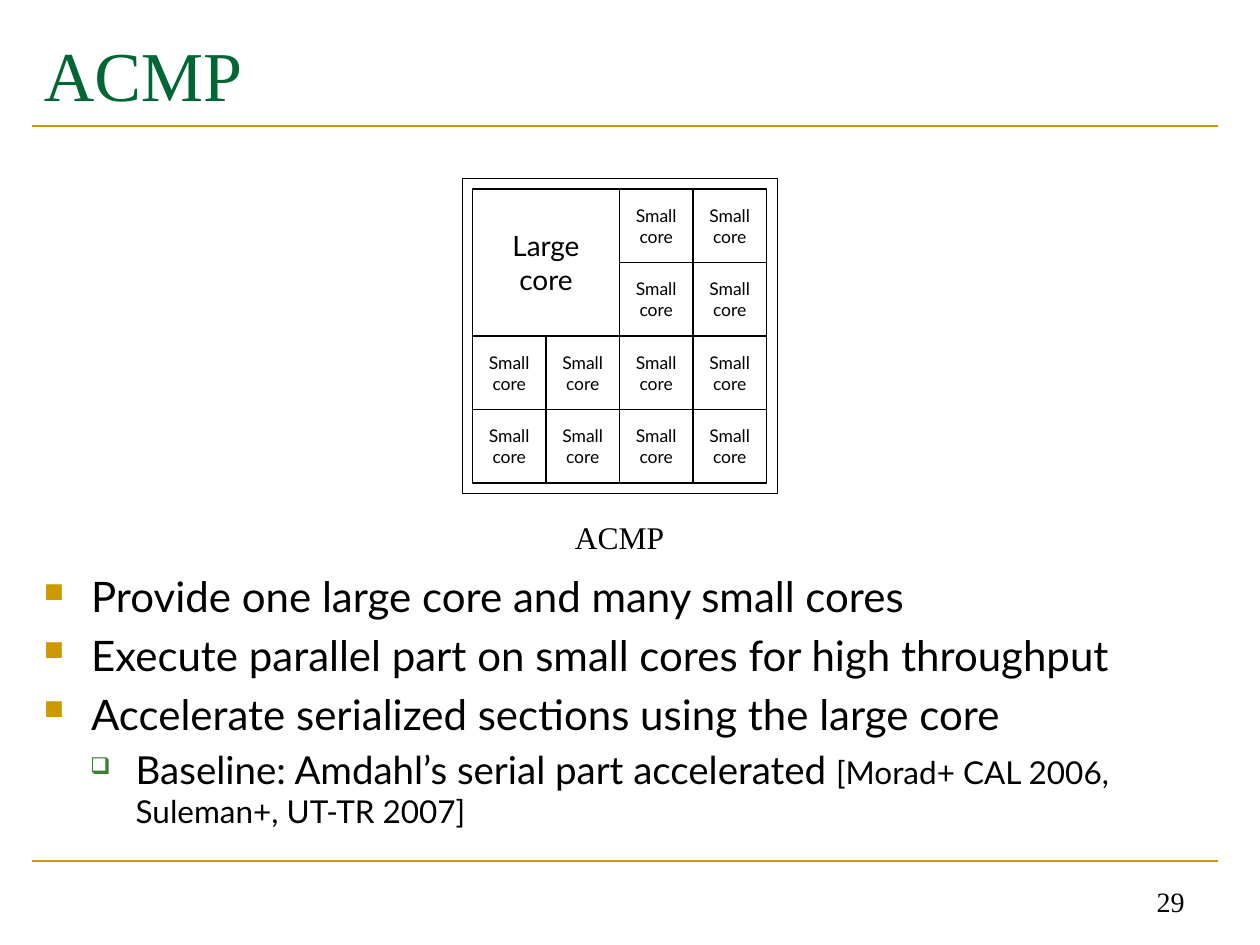
from copy import deepcopy
from dataclasses import dataclass

from lxml import etree
from pptx import Presentation
from pptx import util as u
from pptx.dml.color import RGBColor
from pptx.enum import shapes, text
from pptx.oxml import ns

GOLD = RGBColor(0xCC, 0x99, 0x00)
TITLE_GREEN = RGBColor(0x00, 0x66, 0x33)
BULLET_GREEN = RGBColor(0x3B, 0x81, 0x2F)
BLACK = RGBColor(0x00, 0x00, 0x00)
WHITE = RGBColor(0xFF, 0xFF, 0xFF)
SANS, SERIF = "Lato", "Times New Roman"
LEFT, WIDTH = 18, 678
GRID_X, GRID_Y, CELL = 270, 108, 42
LEFT_AL, CENTER, RIGHT = text.PP_ALIGN.LEFT, text.PP_ALIGN.CENTER, text.PP_ALIGN.RIGHT


@dataclass
class Box:
    x: float
    y: float
    w: float
    h: float


@dataclass
class Style:
    size: float
    font: str = SANS
    color: RGBColor = BLACK


@dataclass
class Core:
    col: int
    row: int
    span: int
    label: str
    size: float


@dataclass
class Level:
    indent: float
    hang: float
    char: str
    color: RGBColor
    percent: int


@dataclass
class Bullet:
    level: Level
    runs: list[tuple[str, float]]


TOP = Level(27, 27, "■", GOLD, 65)
SUB = Level(52.5, 26, "❑", BULLET_GREEN, 60)
BULLETS = [
    Bullet(TOP, [("Provide one large core and many small cores", 24)]),
    Bullet(TOP, [("Execute parallel part on small cores for high throughput", 24)]),
    Bullet(TOP, [("Accelerate serialized sections using the large core", 24)]),
    Bullet(SUB, [("Baseline: Amdahl’s serial part accelerated ", 22),
                 ("[Morad+ CAL 2006, Suleman+, UT-TR 2007]", 18)]),
]
CORES = [Core(c, r, 1, "Small\vcore", 10)
         for r in range(4) for c in range(4) if r > 1 or c > 1]
CORES.append(Core(0, 0, 2, "Large\ncore", 16))


def points(b: Box) -> list[u.Pt]:
    return [u.Pt(v) for v in (b.x, b.y, b.w, b.h)]


def format_run(r, st: Style) -> None:
    r.font.size = u.Pt(st.size)
    r.font.name = st.font
    r.font.color.rgb = st.color


def fill_text(sp, label: str, st: Style, align, anchor, wrap: bool = True) -> None:
    tf = sp.text_frame
    tf.word_wrap = wrap
    tf.vertical_anchor = anchor
    tf.text = label
    for p in tf.paragraphs:
        p.alignment = align
        for r in p.runs:
            format_run(r, st)
        for br in p._p.findall(ns.qn("a:br")):
            br.append(deepcopy(p.runs[0].font._element))


def add_label(s, b: Box, label: str, st: Style, align, anchor) -> None:
    fill_text(s.shapes.add_textbox(*points(b)), label, st, align, anchor)


def add_rule(s, y: float) -> None:
    ln = s.shapes.add_connector(shapes.MSO_CONNECTOR.STRAIGHT,
                                u.Pt(LEFT), u.Pt(y), u.Pt(LEFT + WIDTH), u.Pt(y))
    ln.line.color.rgb = GOLD
    ln.line.width = u.Pt(1.5)
    etree.SubElement(ln._element.spPr, ns.qn("a:effectLst"))


def add_rect(group, b: Box, line: float):
    sp = group.shapes.add_shape(shapes.MSO_SHAPE.RECTANGLE, *points(b))
    sp.shadow.inherit = False
    sp.fill.background()
    if line:
        sp.line.color.rgb = BLACK
        sp.line.width = u.Pt(line)
    else:
        sp.line.fill.background()
    return sp


def add_chip(s) -> None:
    group = s.shapes.add_group_shape()
    add_rect(group, Box(GRID_X - 6, GRID_Y - 6, 4 * CELL + 12, 4 * CELL + 12), 0.25)
    for core in CORES:
        side = core.span * CELL
        b = Box(GRID_X + core.col * CELL, GRID_Y + core.row * CELL, side, side)
        fill_text(add_rect(group, b, 0.75), core.label, Style(core.size),
                  CENTER, text.MSO_ANCHOR.MIDDLE, wrap=False)
    sp = add_rect(group, Box(GRID_X, 292.5, 4 * CELL, 29), 0)
    sp.fill.solid()
    sp.fill.fore_color.rgb = WHITE
    fill_text(sp, "ACMP", Style(18, SERIF), CENTER, text.MSO_ANCHOR.TOP)


def set_bullet(p, lv: Level) -> None:
    pr = p._p.get_or_add_pPr()
    pr.set("marL", str(u.Pt(lv.indent)))
    pr.set("indent", str(-u.Pt(lv.hang)))
    color = etree.SubElement(pr, ns.qn("a:buClr"))
    etree.SubElement(color, ns.qn("a:srgbClr"), val=str(lv.color))
    etree.SubElement(pr, ns.qn("a:buSzPct"), val=str(lv.percent * 1000))
    etree.SubElement(pr, ns.qn("a:buChar"), char=lv.char)


def add_bullets(s, b: Box, items: list[Bullet]) -> None:
    tf = s.shapes.add_textbox(*points(b)).text_frame
    tf.word_wrap = True
    for i, item in enumerate(items):
        p = tf.add_paragraph() if i else tf.paragraphs[0]
        p.level = 1 if item.level is SUB else 0
        p.space_before = u.Pt(0.2 * item.runs[0][1] if i else 0)
        set_bullet(p, item.level)
        for label, size in item.runs:
            r = p.add_run()
            r.text = label
            format_run(r, Style(size))


def main() -> None:
    prs = Presentation()
    prs.slide_width, prs.slide_height = u.Pt(720), u.Pt(540)
    s = prs.slides.add_slide(prs.slide_layouts[6])
    add_rule(s, 492)
    add_rule(s, 72)
    add_label(s, Box(LEFT, 12, WIDTH, 60), "ACMP", Style(40, SERIF, TITLE_GREEN),
              LEFT_AL, text.MSO_ANCHOR.MIDDLE)
    add_bullets(s, Box(LEFT, 322.5, WIDTH, 169), BULLETS)
    add_label(s, Box(516, 492, 168, 36), "29", Style(16, SERIF),
              RIGHT, text.MSO_ANCHOR.BOTTOM)
    add_chip(s)
    prs.save("out.pptx")


if __name__ == "__main__":
    main()
